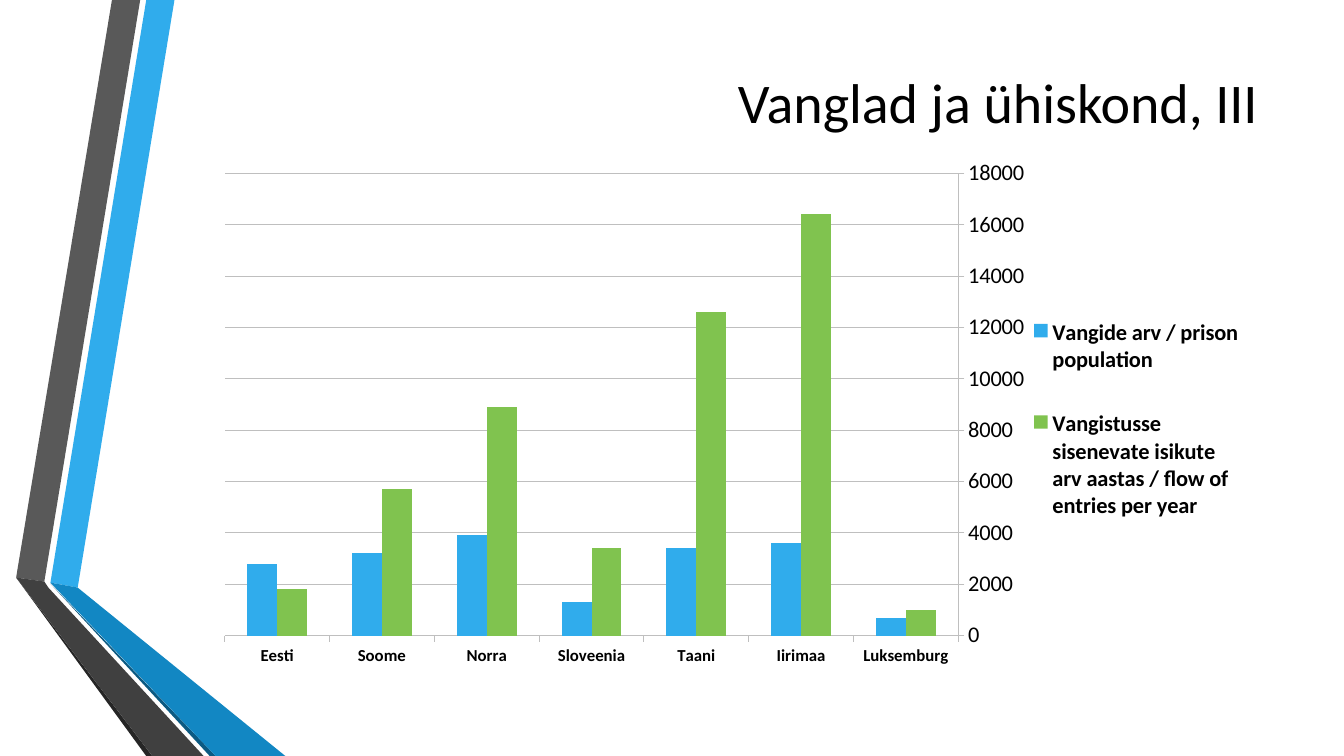
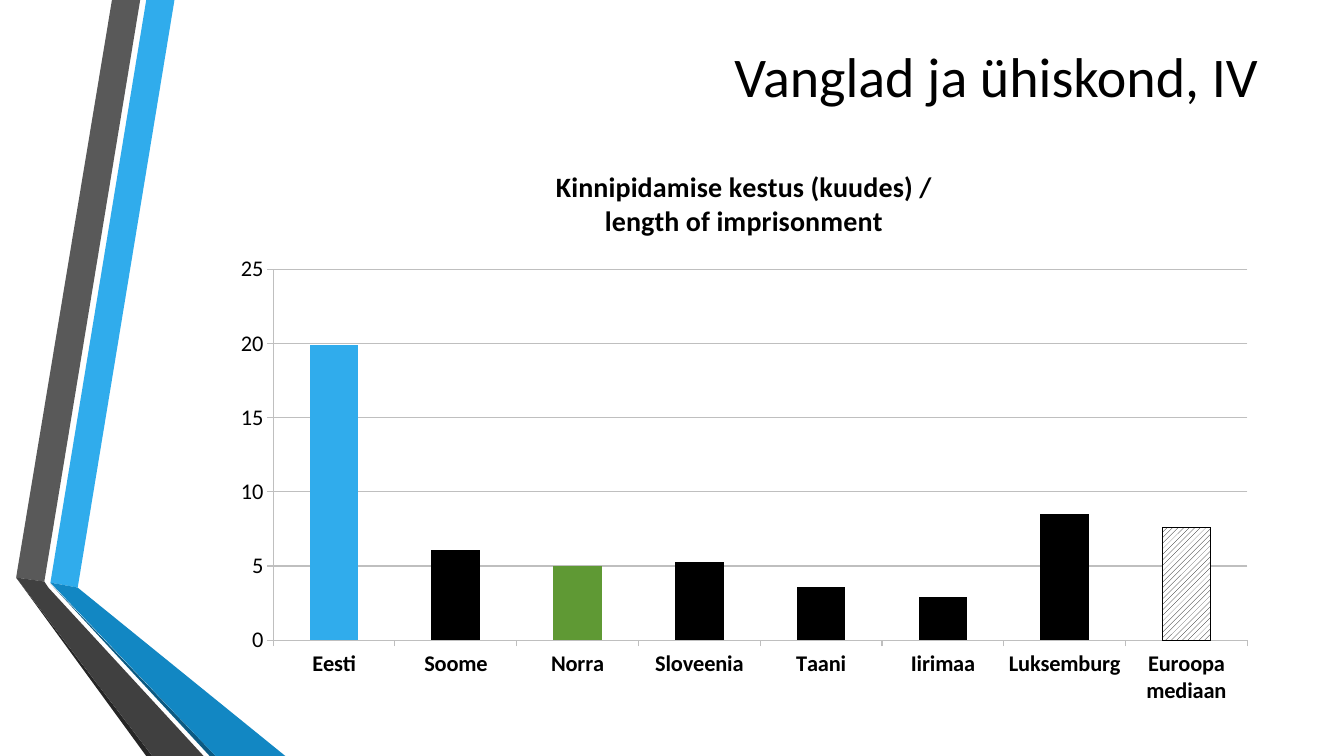
"""Build two slides with column charts about prisons and society."""
import pptx
import pptx.chart.data
import pptx.dml.color
import pptx.enum.chart
import pptx.enum.dml
import pptx.enum.text
import pptx.oxml
import pptx.oxml.ns
import pptx.util

FONT = "Calibri"
COLORS = {
    "text": "000000", "grid": "BFBFBF", "paper": "FFFFFF",
    "blue": "30ACEC", "blue fold": "1287C3", "blue shade": "0C5A82",
    "gray": "595959", "gray fold": "404040", "gray shade": "262626",
    "green": "80C34F", "dark green": "5F9934",
}

RIBBONS = [
    ("blue", [(3.75, 77.07), (5.78, 77.73), (12.98, 0), (10.88, 0)]),
    ("gray", [(10.43, 0), (8.33, 0), (1.2, 76.4), (3.3, 76.93)]),
    ("gray shade", [(1.2, 76.4), (10.88, 100), (11.33, 100)]),
    ("blue shade", [(3.75, 77.2), (15.6, 100), (16.05, 100)]),
    ("blue fold", [(3.75, 77.07), (16.05, 100), (21.23, 100), (5.78, 77.73)]),
    ("gray fold", [(15.15, 100), (3.6, 77.73), (3.3, 76.93), (1.2, 76.4), (11.33, 100)]),
]

COUNTRIES = ["Eesti", "Soome", "Norra", "Sloveenia", "Taani", "Iirimaa", "Luksemburg"]
SLIDES = [
    {
        "title": "Vanglad ja ühiskond, III", "title at": (12.15, 6.35, 82.2, 14),
        "chart at": (15.38, 20.4, 79, 77.2), "plot at": (1.7, 3.3, 69.1, 79.2),
        "kind": pptx.enum.chart.XL_CHART_TYPE.COLUMN_CLUSTERED, "overlap": 0,
        "categories": COUNTRIES, "category size": 12, "top": 18000, "step": 2000,
        "values right": True,
        "series": [
            ("Vangide arv / prison population", "blue",
             [2800, 3200, 3900, 1300, 3400, 3600, 700]),
            ("Vangistusse sisenevate isikute arv aastas / flow of entries per year", "green",
             [1800, 5700, 8900, 3400, 12600, 16400, 1000]),
        ],
        "points": [], "heading": None, "legend at": (77.9, 22, 19.3, 47),
    },
    {
        "title": "Vanglad ja ühiskond, IV", "title at": (12.15, 4.2, 82.2, 11.6),
        "chart at": (16.35, 19.6, 78.02, 75.07), "plot at": (5.1, 21.4, 92.9, 65.3),
        "kind": pptx.enum.chart.XL_CHART_TYPE.COLUMN_STACKED, "overlap": 100,
        "categories": COUNTRIES + ["Euroopa mediaan"], "category size": 16,
        "top": 25, "step": 5,
        "values right": False,
        "series": [("Series 1", "blue", [19.9, 6.1, 5, 5.3, 3.6, 2.9, 8.5, 7.6])],
        "points": ["blue", "text", "dark green", "text", "text", "text", "text", "hatch"],
        "heading": "Kinnipidamise kestus (kuudes) /\nlength of imprisonment",
        "legend at": None,
    },
]


def style(font, size, bold=False):
    """Give a font the shared face and colour."""
    font.name, font.size, font.bold = FONT, pptx.util.Pt(size), bold
    font.color.rgb = pptx.dml.color.RGBColor.from_string(COLORS["text"])


def manual_layout(position, target=""):
    """Return a chart layout element for a position in percent."""
    sizes = "".join(f'<c:{tag} val="{share / 100:.3f}"/>' for tag, share in zip("xywh", position))
    return pptx.oxml.parse_xml(
        f'<c:layout {pptx.oxml.ns.nsdecls("c")}><c:manualLayout>{target}'
        f'<c:xMode val="edge"/><c:yMode val="edge"/>{sizes}</c:manualLayout></c:layout>')


rgb = {name: pptx.dml.color.RGBColor.from_string(code) for name, code in COLORS.items()}
deck = pptx.Presentation()
deck.slide_width, deck.slide_height = pptx.util.Inches(13.33), pptx.util.Inches(7.5)
column, row = deck.slide_width / 100, deck.slide_height / 100
layout = deck.slide_layouts[5]

for number, content in enumerate(SLIDES):
    page = deck.slides.add_slide(layout)

    if number == 0:
        for color, corners in RIBBONS:
            points = [(round(x * column), round(y * row)) for x, y in corners]
            builder = page.shapes.build_freeform(*points[0])
            builder.add_line_segments(points[1:], close=True)
            ribbon = builder.convert_to_shape()
            ribbon.shadow.inherit = False
            ribbon.fill.solid()
            ribbon.fill.fore_color.rgb = rgb[color]
            ribbon.line.fill.background()
            layout.shapes.element.append(ribbon.element)

    title = page.shapes.title
    left, top, width, height = content["title at"]
    title.left, title.width = round(left * column), round(width * column)
    title.top, title.height = round(top * row), round(height * row)
    title.text_frame.text = content["title"]
    title.text_frame.vertical_anchor = pptx.enum.text.MSO_ANCHOR.MIDDLE
    title.text_frame.paragraphs[0].alignment = pptx.enum.text.PP_ALIGN.RIGHT
    style(title.text_frame.paragraphs[0].runs[0].font, 40)

    data = pptx.chart.data.CategoryChartData()
    data.categories = content["categories"]
    for name, color, values in content["series"]:
        data.add_series(name, values)
    left, top, width, height = content["chart at"]
    chart = page.shapes.add_chart(
        content["kind"], round(left * column), round(top * row),
        round(width * column), round(height * row), data).chart
    style(chart.font, 12)

    plot = chart.plots[0]
    plot.vary_by_categories = False
    plot.gap_width, plot.overlap = 150, content["overlap"]
    for series, (name, color, values) in zip(plot.series, content["series"]):
        series.invert_if_negative = False
        series.format.fill.solid()
        series.format.fill.fore_color.rgb = rgb[color]
    for index, color in enumerate(content["points"]):
        look = plot.series[0].points[index].format
        if color == "hatch":
            look.fill.patterned()
            look.fill.pattern = pptx.enum.dml.MSO_PATTERN.WIDE_UPWARD_DIAGONAL
            look.fill.fore_color.rgb, look.fill.back_color.rgb = rgb["text"], rgb["paper"]
            look.line.color.rgb = rgb["text"]
        else:
            look.fill.solid()
            look.fill.fore_color.rgb = rgb[color]

    categories, values = chart.category_axis, chart.value_axis
    style(categories.tick_labels.font, content["category size"], True)
    style(values.tick_labels.font, 16)
    values.minimum_scale, values.maximum_scale = 0, content["top"]
    values.major_unit = content["step"]
    values.has_major_gridlines = True
    for line in (categories.format.line, values.format.line, values.major_gridlines.format.line):
        line.color.rgb, line.width = rgb["grid"], pptx.util.Pt(0.75)
    for axis in (categories, values):
        axis.major_tick_mark = pptx.enum.chart.XL_TICK_MARK.OUTSIDE

    area = chart.element.find(".//" + pptx.oxml.ns.qn("c:plotArea"))
    if content["values right"]:
        categories.crosses = pptx.enum.chart.XL_AXIS_CROSSES.MAXIMUM
        values.tick_label_position = pptx.enum.chart.XL_TICK_LABEL_POSITION.HIGH
        value_element = area.find(pptx.oxml.ns.qn("c:valAx"))
        value_element.find(pptx.oxml.ns.qn("c:axPos")).set("val", "r")
        value_element.find(pptx.oxml.ns.qn("c:crosses")).set("val", "max")
    for old in area.findall(pptx.oxml.ns.qn("c:layout")):
        area.remove(old)
    area.insert(0, manual_layout(content["plot at"], '<c:layoutTarget val="inner"/>'))

    chart.has_title = content["heading"] is not None
    if chart.has_title:
        chart.chart_title.include_in_layout = False
        frame = chart.chart_title.text_frame
        frame.text = content["heading"]
        for para in frame.paragraphs:
            style(para.runs[0].font, 20, True)

    chart.has_legend = content["legend at"] is not None
    if chart.has_legend:
        chart.legend.position = pptx.enum.chart.XL_LEGEND_POSITION.RIGHT
        chart.legend.include_in_layout = False
        style(chart.legend.font, 16, True)
        legend = chart.element.find(".//" + pptx.oxml.ns.qn("c:legend"))
        for old in legend.findall(pptx.oxml.ns.qn("c:layout")):
            legend.remove(old)
        legend.insert(1, manual_layout(content["legend at"]))

deck.save("out.pptx")
